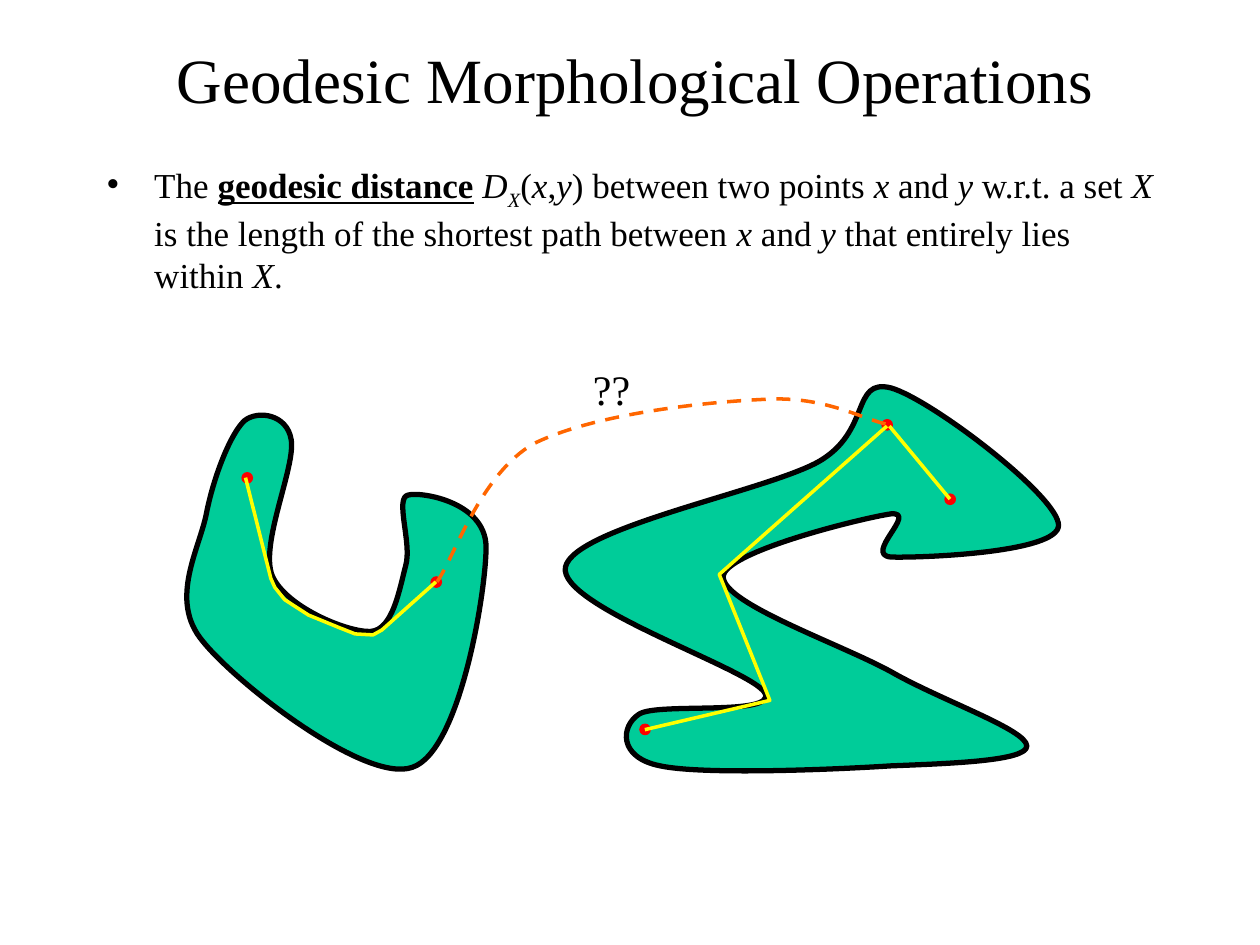
from itertools import cycle

from lxml.etree import SubElement
from pptx import Presentation
from pptx.dml.color import RGBColor
from pptx.enum.dml import MSO_LINE as Dash
from pptx.enum.shapes import MSO_CONNECTOR as Conn, MSO_SHAPE as Shape
from pptx.enum.text import MSO_ANCHOR as Anchor, PP_ALIGN as Align
from pptx.oxml.ns import qn
from pptx.oxml.xmlchemy import OxmlElement as Node
from pptx.util import Cm, Pt

BLACK, GREEN, RED = "000000", "00CC99", "FF0000"
YELLOW, ORANGE = "FFFF00", "FF6600"
ITAL = {"italic": True}
SUB = {"italic": True, "base": -25000}
BOLD = {"bold": True, "underline": True}


def color(code):
    return RGBColor.from_string(code)


def cms(*vals):
    return [Cm(v) for v in vals]


class Page:
    font = "Times New Roman"

    def __init__(self, slide):
        self.slide = slide
        self.shapes = slide.shapes

    def text(self, box, runs, size, align=Align.LEFT, anchor=Anchor.TOP):
        """Add a one-paragraph box; runs are (text, format) pairs."""
        frame = self.shapes.add_textbox(*cms(*box)).text_frame
        frame.word_wrap = True
        frame.vertical_anchor = anchor
        para = frame.paragraphs[0]
        para.alignment = align
        for words, form in runs:
            run = para.add_run()
            run.text = words
            look = {"name": self.font, "size": Pt(size), **form}
            base = look.pop("base", None)
            for key, val in look.items():
                setattr(run.font, key, val)
            run.font.color.rgb = color(BLACK)
            if base:
                run._r.get_or_add_rPr().set("baseline", str(base))
        return para

    def bullet(self, para, mark, indent):
        props = para._p.get_or_add_pPr()
        props.set("marL", str(Cm(indent)))
        props.set("indent", str(-Cm(indent)))
        SubElement(props, qn("a:buChar")).set("char", mark)

    def paint(self, shape, line, width, fill=None):
        shape.shadow.inherit = False
        if fill:
            shape.fill.solid()
            shape.fill.fore_color.rgb = color(fill)
        else:
            shape.fill.background()
        self.stroke(shape, line, width)

    def stroke(self, shape, line, width):
        shape.line.color.rgb = color(line)
        shape.line.width = Pt(width)

    def dot(self, left, top, size=0.21):
        oval = self.shapes.add_shape(Shape.OVAL, *cms(left, top, size, size))
        self.paint(oval, RED, 0.75, RED)

    def line(self, start, end, hue, width):
        link = self.shapes.add_connector(
            Conn.STRAIGHT, *cms(*start, *end))
        self.stroke(link, hue, width)
        SubElement(link._element.spPr, qn("a:effectLst"))

    def trace(self, points, hue, width, fill=None):
        """Draw straight segments, closed when there is a fill."""
        first, *rest = [cms(*p) for p in points]
        pen = self.shapes.build_freeform(*first)
        pen.add_line_segments(rest, close=bool(fill))
        shape = pen.convert_to_shape()
        self.paint(shape, hue, width, fill)
        return shape

    def curve(self, points, hue, width, fill=None):
        """Draw Bezier arcs: a start, then two handles and an end for each."""
        shape = self.trace(points, hue, width, fill)
        legs = list(shape._element.iter(qn("a:lnTo")))
        for i in range(0, len(legs), 3):
            arc = Node("a:cubicBezTo")
            legs[i].addprevious(arc)
            for leg in legs[i:i + 3]:
                arc.append(leg[0])
                leg.getparent().remove(leg)
        return shape


ZIGZAG = [
    (14.58, 11.63),
    (14.58, 12.17), (16.94, 12.98), (17.96, 13.54),
    (18.97, 14.12), (20.7, 14.71), (20.7, 15.04),
    (20.7, 15.34), (19.2, 15.39), (17.96, 15.44),
    (16.71, 15.52), (14.15, 15.62), (13.31, 15.44),
    (12.45, 15.27), (12.52, 14.63), (12.88, 14.4),
    (13.23, 14.15), (15.67, 14.45), (15.42, 13.97),
    (15.16, 13.49), (11.23, 12.22), (11.4, 11.43),
    (11.58, 10.64), (15.39, 9.91), (16.48, 9.32),
    (17.58, 8.71), (17.15, 7.62), (17.96, 7.82),
    (18.77, 8.05), (21.34, 10.01), (21.34, 10.59),
    (21.34, 11.15), (18.52, 11.25), (17.96, 11.23),
    (17.4, 11.18), (18.52, 10.31), (17.96, 10.36),
    (17.4, 10.44), (14.58, 11.13), (14.58, 11.63),
]
HOOK = [
    (4.17, 10.31),
    (4.04, 11.05), (3.38, 12.09), (4.09, 12.93),
    (4.78, 13.79), (7.37, 15.8), (8.31, 15.47),
    (9.27, 15.16), (9.8, 11.94), (9.8, 11.02),
    (9.78, 10.11), (8.48, 9.91), (8.23, 9.98),
    (7.95, 10.03), (8.31, 10.95), (8.18, 11.4),
    (8.05, 11.89), (7.92, 12.7), (7.47, 12.73),
    (7.01, 12.75), (5.77, 12.24), (5.49, 11.61),
    (5.23, 10.97), (5.97, 9.4), (5.87, 8.86),
    (5.79, 8.36), (5.21, 8.26), (4.93, 8.48),
    (4.65, 8.74), (4.32, 9.58), (4.17, 10.31),
]
BRIDGE = [
    (8.81, 11.73),
    (9.14, 11.28), (9.68, 9.55), (10.77, 8.94),
    (12.01, 8.33), (14.27, 8.1), (15.44, 8.05),
    (16.64, 7.98), (17.4, 8.46), (17.91, 8.56),
]
ROUTES = [
    [(4.95, 9.63), (5.46, 11.66), (5.54, 11.84), (5.74, 12.09),
     (6.22, 12.4), (6.83, 12.65), (7.16, 12.78), (7.52, 12.8),
     (7.7, 12.7), (8.79, 11.73)],
    [(13, 14.71), (15.52, 14.12), (14.5, 11.58), (17.88, 8.59)],
]
DOTS = [(4.88, 9.53), (8.69, 11.63), (17.78, 8.46), (12.9, 14.6),
        (19.05, 9.96)]
REST = ("(*x*,*y*) between two points *x* and *y* w.r.t. a set *X* is the "
        "length of the shortest path between *x* and *y* that entirely lies "
        "within *X*.")


def main():
    deck = Presentation()
    deck.slide_width, deck.slide_height = cms(25.4, 19.05)
    page = Page(deck.slides.add_slide(deck.slide_layouts[6]))

    page.text((1.63, 0.48, 22.35, 2.18),
              [("Geodesic Morphological Operations", {})], 36,
              Align.CENTER, Anchor.MIDDLE)
    runs = [("The ", {}), ("geodesic distance", BOLD), (" ", {}),
            ("D", ITAL), ("X", SUB), *zip(REST.split("*"), cycle(({}, ITAL)))]
    body = page.text((1.91, 3.18, 21.59, 5.08), runs, 20)
    page.bullet(body, "•", 0.95)

    for blob in (ZIGZAG, HOOK):
        page.curve(blob, BLACK, 3, GREEN)
    for spot in DOTS:
        page.dot(*spot)
    for route in ROUTES:
        page.trace(route, YELLOW, 2)
    page.line((17.93, 8.59), (19.15, 10.06), YELLOW, 2)
    page.curve(BRIDGE, ORANGE, 2).line.dash_style = Dash.DASH
    page.text((11.38, 7.21, 1.9, 1.27), [("??", {})], 24, Align.CENTER)

    deck.save("out.pptx")


if __name__ == "__main__":
    main()
